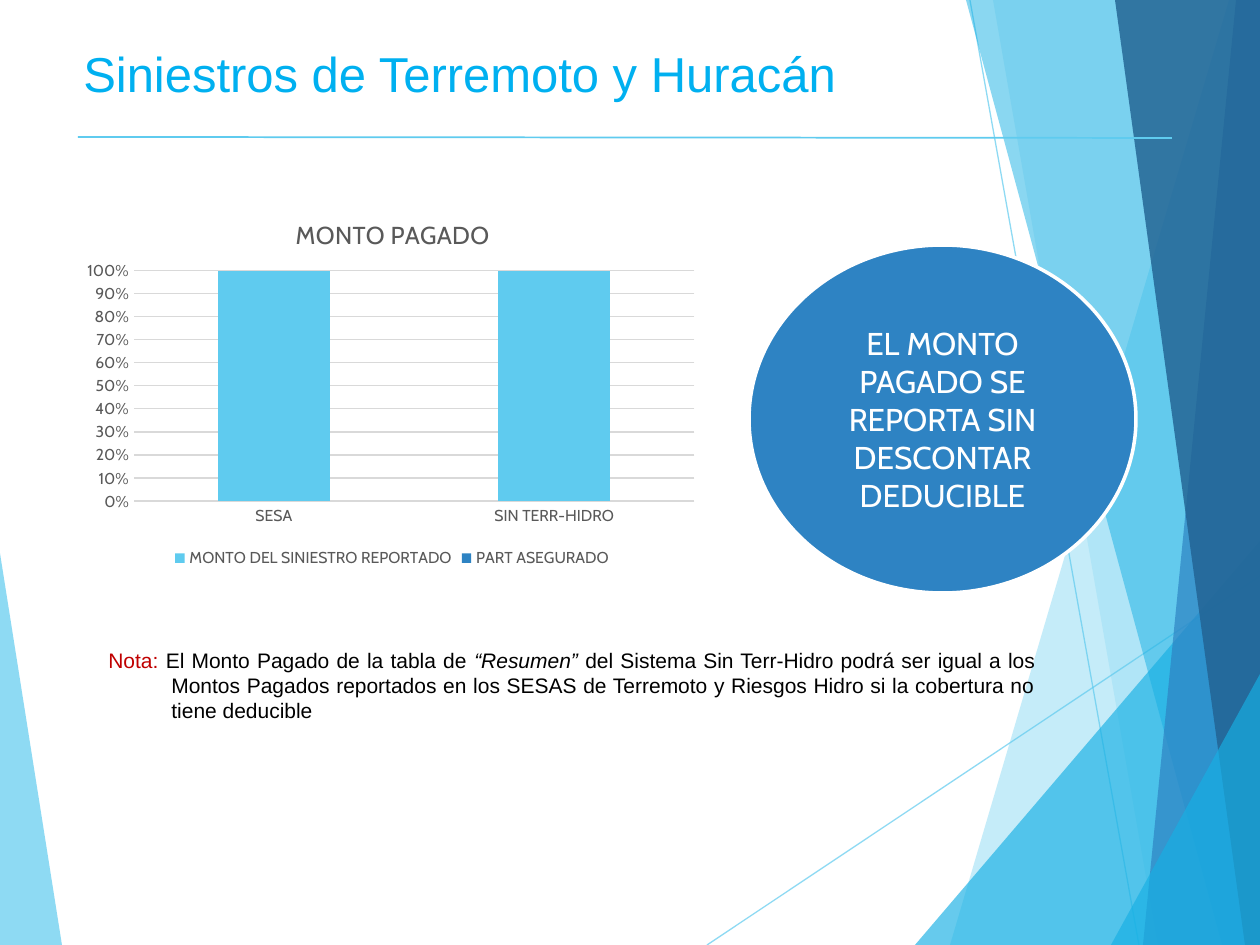
from lxml import etree
from pptx import Presentation
from pptx.chart.data import CategoryChartData
from pptx.dml.color import RGBColor
from pptx.enum.chart import XL_CHART_TYPE as Chart, XL_LEGEND_POSITION as Legend
from pptx.enum.chart import XL_TICK_MARK as Tick
from pptx.enum.shapes import MSO_CONNECTOR as Link, MSO_SHAPE as Shape
from pptx.enum.text import MSO_ANCHOR as Anchor, MSO_AUTO_SIZE as Fit, PP_ALIGN as Align
from pptx.oxml.ns import qn
from pptx.util import Pt

PX = 914400 / 126
W, H = 1260, 945

SKY = RGBColor(0x5F, 0xCB, 0xEF)
CYAN = RGBColor(0x17, 0xB0, 0xE4)
BLUE = RGBColor(0x2E, 0x83, 0xC3)
NAVY = RGBColor(0x22, 0x62, 0x92)
AZURE = RGBColor(0x00, 0xB0, 0xF0)
RED = RGBColor(0xC0, 0x00, 0x00)
BLACK = RGBColor(0, 0, 0)
WHITE = RGBColor(255, 255, 255)
GREY = RGBColor(0x59, 0x59, 0x59)
PALE = RGBColor(0xD9, 0xD9, 0xD9)

TITLE = "Siniestros de Terremoto y Huracán"
CLAIM = "EL MONTO PAGADO SE REPORTA SIN DESCONTAR DEDUCIBLE"
NOTE = [  # text, colour, italic
    ("Nota: ", RED, False),
    ("El Monto Pagado de la tabla de ", BLACK, False),
    ("“Resumen” ", BLACK, True),
    ("del Sistema Sin Terr-Hidro podrá ser igual a los Montos Pagados "
     "reportados en los SESAS de Terremoto y Riesgos Hidro si la cobertura "
     "no tiene deducible", BLACK, False),
]
CHART = "MONTO PAGADO"
CATS = ["SESA", "SIN TERR-HIDRO"]
SERIES = [
    ("MONTO DEL SINIESTRO REPORTADO", (100, 100), SKY),
    ("PART ASEGURADO", (0, None), BLUE),
]
RAYS = [(707, H, W, 576), (970, 0, 1139, H)]
LEFT = [([(0, 553), (62, H), (0, H)], SKY, 70)]
FACETS = [  # corners, colour, opacity in percent
    ([(1229, 0), (950, H), (W, H), (W, 0)], SKY, 36),
    ([(993, 0), (1158, H), (W, H), (W, 0)], SKY, 20),
    ([(915, H), (W, 541), (W, H)], CYAN, 66),
    ([(966, 0), (1222, H), (W, H), (W, 0)], CYAN, 50),
    ([(1236, 0), (1143, H), (W, H), (W, 0)], BLUE, 70),
    ([(1115, 0), (1245, H), (W, H), (W, 0)], NAVY, 82),
    ([(1111, H), (W, 674), (W, H)], CYAN, 66),
]


def emu(*px):
    return [round(p * PX) for p in px]


def fade(fill, pct):
    """Set the opacity of a solid fill."""
    tone = fill._xPr.find(qn("a:solidFill"))[0]
    etree.SubElement(tone, qn("a:alpha")).set("val", str(pct * 1000))


def facet(shapes, pts, color, pct):
    form = shapes.build_freeform(*pts[0], scale=PX)
    form.add_line_segments(pts[1:], close=True)
    shape = form.convert_to_shape()
    shape.shadow.inherit = False
    shape.fill.solid()
    shape.fill.fore_color.rgb = color
    fade(shape.fill, pct)
    shape.line.fill.background()


def rule(shapes, ends, width, pct=100):
    line = shapes.add_connector(Link.STRAIGHT, *emu(*ends))
    line.line.color.rgb = SKY
    line.line.width = Pt(width)
    if pct < 100:
        fade(line.line.fill, pct)
    etree.SubElement(line._element.spPr, qn("a:effectLst"))


def style(font, name, size, color):
    font.name, font.size, font.bold = name, Pt(size), False
    font.color.rgb = color


def pin(node, index, **parts):
    """Give a chart part a fixed place, as fractions of the chart."""
    for old in node.findall(qn("c:layout")):
        node.remove(old)
    box = etree.Element(qn("c:layout"))
    man = etree.SubElement(box, qn("c:manualLayout"))
    for key, val in parts.items():
        etree.SubElement(man, qn("c:" + key)).set("val", str(val))
    node.insert(index, box)


def add_title(slide):
    title = slide.shapes.title
    title.left, title.top, title.width, title.height = emu(-3, 37, 925, 72)
    frame = title.text_frame
    frame.text = TITLE
    frame.vertical_anchor = Anchor.TOP
    frame.auto_size = Fit.SHAPE_TO_FIT_TEXT
    para = frame.paragraphs[0]
    para.alignment = Align.CENTER
    style(para.runs[0].font, "Arial", 28, AZURE)


def add_claim(shapes):
    disc = shapes.add_shape(Shape.FLOWCHART_CONNECTOR, *emu(749, 245, 387, 348))
    disc.shadow.inherit = False
    disc.fill.solid()
    disc.fill.fore_color.rgb = BLUE
    disc.line.color.rgb = WHITE
    disc.line.width = Pt(2)
    frame = disc.text_frame
    frame.text = CLAIM
    frame.vertical_anchor = Anchor.MIDDLE
    para = frame.paragraphs[0]
    para.alignment = Align.CENTER
    style(para.runs[0].font, "Cabin", 18, WHITE)


def add_note(shapes):
    frame = shapes.add_textbox(*emu(96, 641, 952, 90)).text_frame
    frame.word_wrap = True
    frame.auto_size = Fit.SHAPE_TO_FIT_TEXT
    para = frame.paragraphs[0]
    para.alignment = Align.JUSTIFY
    props = para._p.get_or_add_pPr()
    props.set("marL", str(emu(63)[0]))
    props.set("indent", str(emu(-65)[0]))
    for text, color, slant in NOTE:
        run = para.add_run()
        run.text = text
        style(run.font, "Arial", 12, color)
        run.font.italic = slant


def add_chart(shapes):
    data = CategoryChartData()
    data.categories = CATS
    for name, vals, _ in SERIES:
        data.add_series(name, vals)
    chart = shapes.add_chart(
        Chart.COLUMN_STACKED_100, *emu(77, 195, 630, 378), data).chart
    style(chart.font, "Cabin", 10, BLACK)

    frame = chart.chart_title.text_frame
    frame.text = CHART
    style(frame.paragraphs[0].runs[0].font, "Cabin", 14, GREY)
    pin(chart.chart_title._element, 1, xMode="edge", yMode="edge", x=0.34, y=0.05)

    plot = chart.plots[0]
    plot.gap_width, plot.overlap = 150, 100
    plot.vary_by_categories = False
    for series, (_, _, color) in zip(plot.series, SERIES):
        series.format.fill.solid()
        series.format.fill.fore_color.rgb = color
    pin(plot._element.getparent(), 0, layoutTarget="inner", xMode="edge",
        yMode="edge", x=0.09, y=0.2, w=0.89, h=0.61)

    for axis in (chart.category_axis, chart.value_axis):
        axis.major_tick_mark = axis.minor_tick_mark = Tick.NONE
        axis.format.line.fill.background()
        style(axis.tick_labels.font, "Cabin", 9, GREY)
    axis = chart.value_axis
    axis.minimum_scale, axis.maximum_scale, axis.major_unit = 0, 1, 0.1
    axis.tick_labels.number_format = "0%"
    axis.tick_labels.number_format_is_linked = False
    grid = axis.major_gridlines.format.line
    grid.color.rgb = PALE
    grid.width = Pt(0.75)

    chart.has_legend = True
    chart.legend.position = Legend.BOTTOM
    chart.legend.include_in_layout = False
    style(chart.legend.font, "Cabin", 9, GREY)


def main():
    deck = Presentation()
    deck.slide_width, deck.slide_height = emu(W, H)
    slide = deck.slides.add_slide(deck.slide_layouts[5])
    shapes = slide.shapes
    for item in LEFT:
        facet(shapes, *item)
    for ends in RAYS:
        rule(shapes, ends, 0.75, 70)
    for item in FACETS:
        facet(shapes, *item)
    add_title(slide)
    rule(shapes, (78, 137, 1172, 138), 1)
    add_claim(shapes)
    add_note(shapes)
    add_chart(shapes)
    deck.save("out.pptx")


if __name__ == "__main__":
    main()
